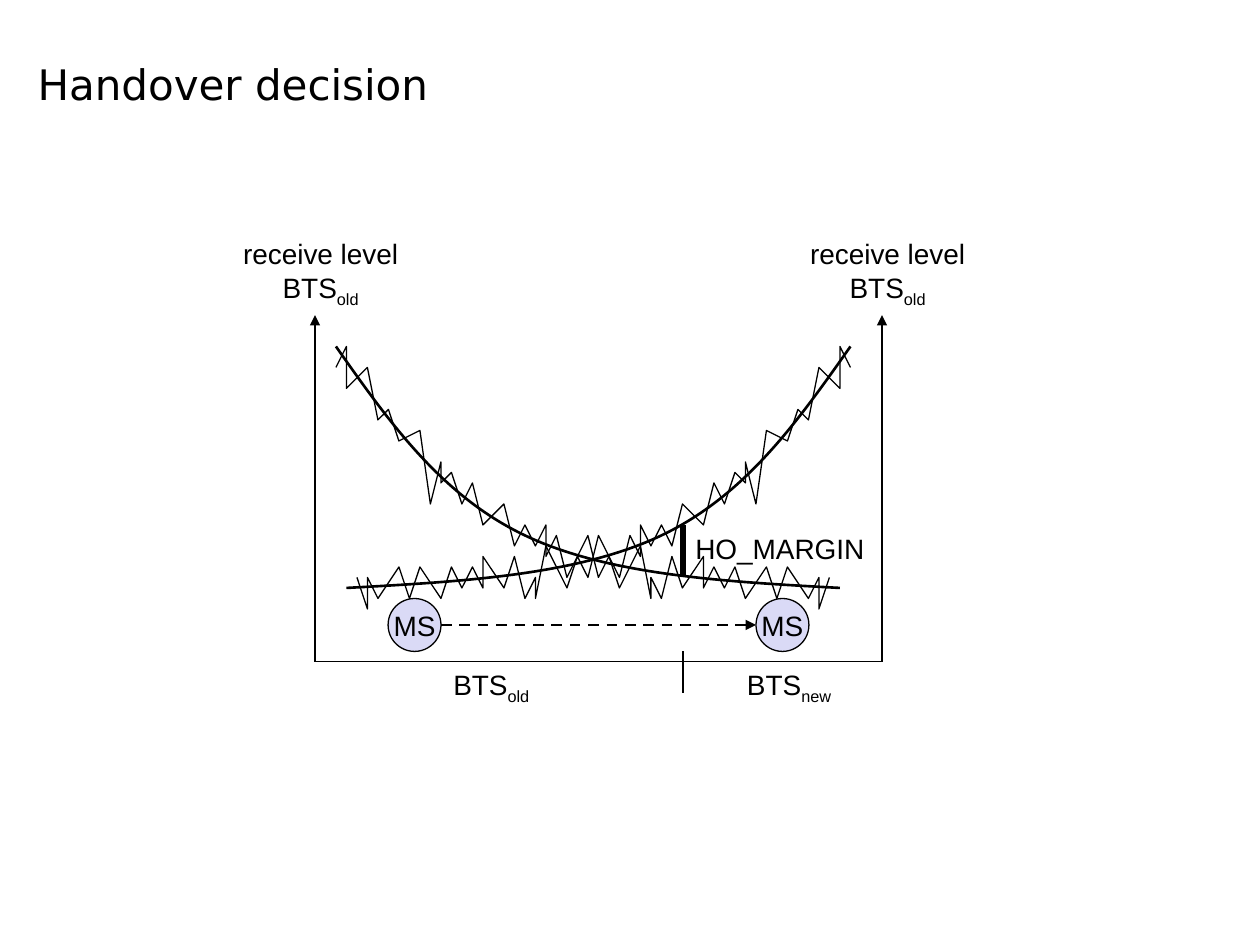
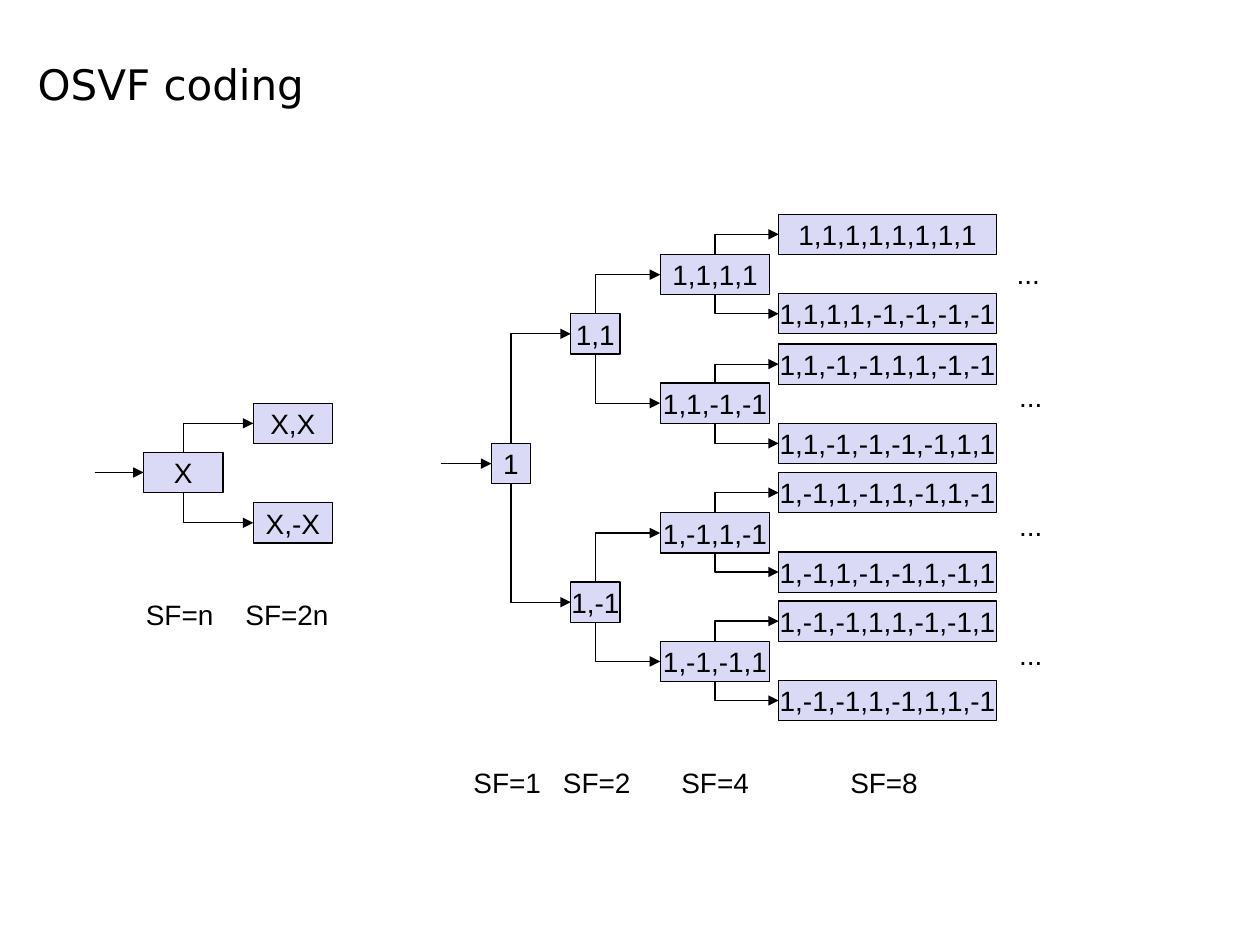
import pptx
import pptx.util
import pptx.dml.color
import pptx.enum.dml
import pptx.enum.shapes
import pptx.enum.text
import pptx.oxml.ns
from lxml import etree

Inches = pptx.util.Inches
Pt = pptx.util.Pt
SHAPE = pptx.enum.shapes.MSO_SHAPE
LINE = pptx.enum.shapes.MSO_CONNECTOR
ANCHOR = pptx.enum.text.MSO_ANCHOR
ALIGN = pptx.enum.text.PP_ALIGN
FIT = pptx.enum.text.MSO_AUTO_SIZE
DASH = pptx.enum.dml.MSO_LINE
qn = pptx.oxml.ns.qn

BLACK = pptx.dml.color.RGBColor(0x00, 0x00, 0x00)
LILAC = pptx.dml.color.RGBColor(0xDA, 0xDA, 0xF6)
THIN, THICK = Pt(0.75), Pt(1.5)


def put(slide, text, box, kind=None, align=ALIGN.LEFT, font="Arial", size=16):
    """Add a text box, or a filled shape of the given kind; ~ starts a subscript."""
    place = [Inches(v) for v in box]
    if kind is None:
        item = slide.shapes.add_textbox(*place)
    else:
        item = slide.shapes.add_shape(kind, *place)
        item.shadow.inherit = False
        item.fill.solid()
        item.fill.fore_color.rgb = LILAC
        item.line.color.rgb = BLACK
        item.line.width = THIN
        align = ALIGN.CENTER
    frame = item.text_frame
    frame.word_wrap = False
    if kind is None:
        frame.auto_size = FIT.SHAPE_TO_FIT_TEXT
    else:
        frame.vertical_anchor = ANCHOR.MIDDLE
    for i, row in enumerate(text.split("\n")):
        para = frame.add_paragraph() if i else frame.paragraphs[0]
        para.alignment = align
        for j, part in enumerate(row.split("~")):
            run = para.add_run()
            run.text = part
            run.font.name = font
            run.font.size = Pt(size)
            run.font.color.rgb = BLACK
            if j:
                run.font._element.set("baseline", "-25000")
    return item


def wire(slide, x1, y1, x2, y2, arrow=None, width=THIN, dash=None):
    """Add a line; arrow is headEnd (at its start) or tailEnd (at its end)."""
    ends = [Inches(v) for v in (x1, y1, x2, y2)]
    item = slide.shapes.add_connector(LINE.STRAIGHT, *ends)
    item.line.color.rgb = BLACK
    item.line.width = width
    if dash:
        item.line.dash_style = dash
    props = item._element.spPr
    if arrow:
        tip = etree.SubElement(props.find(qn("a:ln")), qn("a:" + arrow))
        tip.set("type", "triangle")
    etree.SubElement(props, qn("a:effectLst"))
    return item


deck = pptx.Presentation()
deck.slide_width, deck.slide_height = Inches(10), Inches(7.5)
slides = []
for title in ("Handover decision", "OSVF coding"):
    slide = deck.slides.add_slide(deck.slide_layouts[6])
    head = put(slide, title, (0.2, 0, 6.61, 0.91), font="DejaVu Sans", size=24)
    head.text_frame.word_wrap = True
    head.text_frame.auto_size = FIT.NONE
    head.text_frame.vertical_anchor = ANCHOR.BOTTOM
    slides.append(slide)
chart, tree = slides

# Handover decision: axes and receive levels
for x in (2.5, 7):
    wire(chart, x, 5.25, x, 2.5, "tailEnd")
    put(chart, "receive level\nBTS~old", (x - 0.67, 1.83, 1.43, 0.64), align=ALIGN.CENTER)
wire(chart, 2.5, 5.25, 7, 5.25)

# Level points of the old station, in twelfths of an inch
MEAN = [(32, 33), (37, 40.1), (42, 47.2), (50, 51), (58, 54.8), (69, 55.4), (80, 56)]
NOISE = [
    (32, 35), (33, 33), (33, 37), (35, 35), (36, 40), (37, 39), (38, 42), (40, 41),
    (41, 48), (42, 44), (42, 46), (43, 45), (44, 48), (45, 46), (46, 50), (48, 48),
    (49, 52), (50, 50), (51, 52), (52, 50), (52, 53), (53, 51), (54, 55), (56, 51),
    (57, 55), (58, 53), (59, 56), (61, 52), (62, 57), (62, 55), (63, 57), (64, 53),
    (65, 56), (67, 53), (67, 56), (68, 54), (69, 56), (70, 54), (71, 57), (73, 54),
    (74, 57), (75, 54), (77, 57), (78, 55), (78, 58), (79, 55),
]
MIRROR = 113  # the new station's x is this minus the old one's

for points, width in ((MEAN, THICK), (NOISE, THIN)):
    for flip in (False, True):
        spots = [(Inches((MIRROR - x if flip else x) / 12), Inches(y / 12))
                 for x, y in points]
        pen = chart.shapes.build_freeform(*spots[0], scale=1.0)
        pen.add_line_segments(spots[1:], close=False)
        level = pen.convert_to_shape()
        level.shadow.inherit = False
        level.fill.background()
        level.line.color.rgb = BLACK
        level.line.width = width
        if points is MEAN:
            # Every three straight segments become one cubic curve
            trace = next(level._element.iter(qn("a:path")))
            steps = trace.findall(qn("a:lnTo"))
            for i in range(0, len(steps), 3):
                curve = etree.SubElement(trace, qn("a:cubicBezTo"))
                for step in steps[i:i + 3]:
                    curve.append(step[0])
                    trace.remove(step)

# Handover margin and the moving station
wire(chart, 5.42, 4.58, 5.42, 4.17, width=Pt(3))
wire(chart, 5.42, 5.17, 5.42, 5.5)
put(chart, "HO_MARGIN", (5.42, 4.17, 1.55, 0.37))
put(chart, "BTS~old", (3.5, 5.25, 0.84, 0.37))
put(chart, "BTS~new", (5.83, 5.25, 0.91, 0.37))
for x in (3.08, 6):
    put(chart, "MS", (x, 4.75, 0.42, 0.42), SHAPE.OVAL)
wire(chart, 3.5, 4.96, 6, 4.96, "tailEnd", THICK, DASH.DASH)

# OSVF coding: root code, feed x, label y, then one column per level as
# left, width, tops, label, label left, label width
TREES = [
    ("X", 0.75, 4.69, [
        (1.14, 0.63, [3.59], "SF=n", 1.06, 0.74),
        (2.01, 0.63, [3.2, 3.99], "SF=2n", 1.85, 0.86),
    ]),
    ("1", 3.5, 6.03, [
        (3.9, 0.31, [3.52], "SF=1", 3.66, 0.74),
        (4.53, 0.39, [2.49, 4.62], "SF=2", 4.37, 0.74),
        (5.24, 0.87, [2.02, 3.04, 4.07, 5.09], "SF=4", 5.31, 0.74),
        (6.18, 1.73, [1.7, 2.33, 2.73, 3.36, 3.75, 4.38, 4.77, 5.4], "SF=8", 6.65, 0.74),
    ]),
]
TALL = 0.32

for root, feed, base, columns in TREES:
    codes, nodes = [[root]], []
    for left, width, tops, tag, start, span in columns:
        put(tree, tag, (start, base, span, 0.37))
        if nodes:
            # Each code c yields (c, c) and (c, -c)
            codes = [code + half for code in codes for half in
                     (code, [c[1:] if c[0] == "-" else "-" + c for c in code])]
        else:
            mid = tops[0] + TALL / 2
            wire(tree, feed, mid, left, mid, "tailEnd")
        kids = [put(tree, ",".join(code), (left, top, width, TALL), SHAPE.RECTANGLE)
                for code, top in zip(codes, tops)]
        if nodes:
            for i, kid in enumerate(kids):
                bend = wire(tree, left, tops[i], left, tops[i], "headEnd")
                bend._element.spPr.prstGeom.set("prst", "bentConnector2")
                bend.begin_connect(kid, 1)
                bend.end_connect(nodes[i // 2], 2 * (i % 2))
        nodes = kids

for x, y in ((7.97, 1.99), (7.99, 2.96), (7.99, 3.99), (7.99, 5.01)):
    put(tree, "...", (x, y, 0.39, 0.37))

deck.save("out.pptx")
